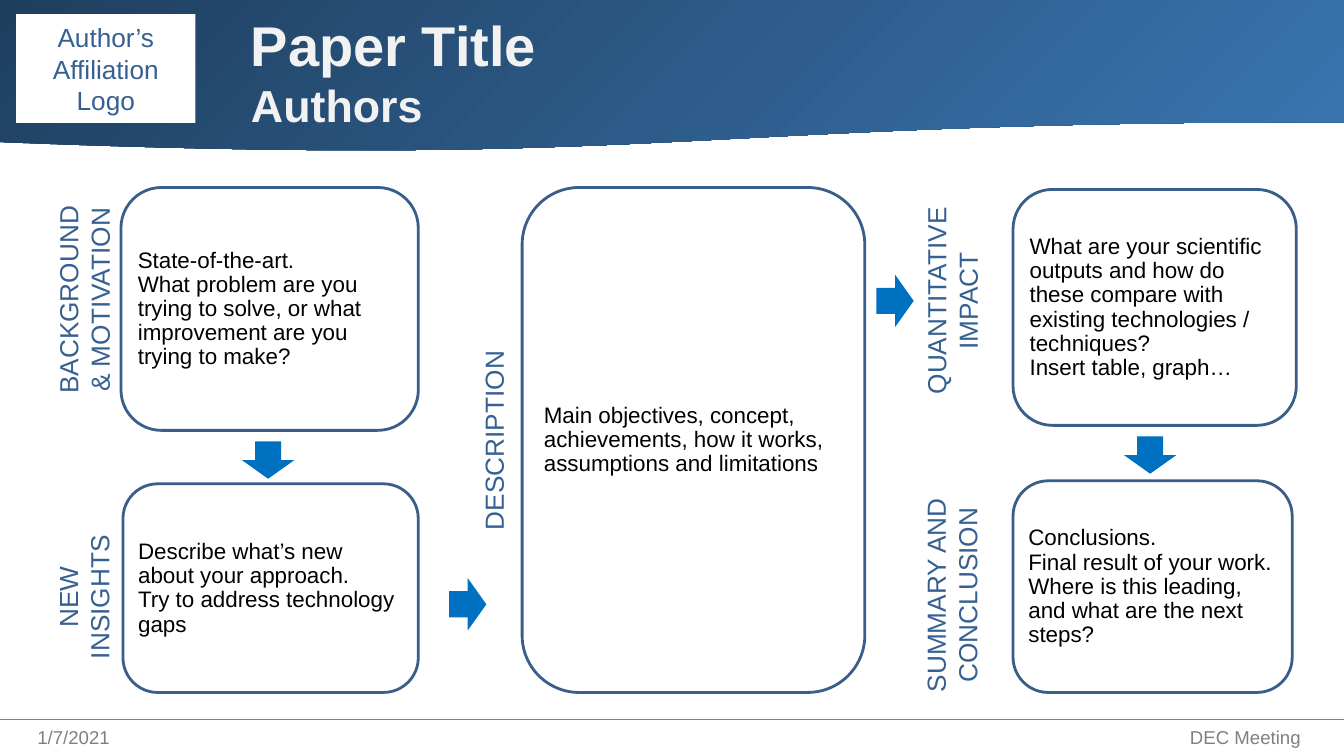
import pptx
import pptx.util
import pptx.dml.color
import pptx.enum.shapes
import pptx.enum.text
import lxml.etree

SHAPE = pptx.enum.shapes.MSO_SHAPE
ALIGN = pptx.enum.text.PP_ALIGN
ANCHOR = pptx.enum.text.MSO_ANCHOR
Pt = pptx.util.Pt

prs = pptx.Presentation()
prs.slide_width = pptx.util.Inches(13.333)
prs.slide_height = pptx.util.Inches(7.5)
s = prs.slides.add_slide(prs.slide_layouts[6])

# Grid: 133.33 columns by 75 rows
COL = prs.slide_width / 133.33
ROW = prs.slide_height / 75


def rgb(value):
    return pptx.dml.color.RGBColor.from_string(value)


def add(at, lines=(), shape=None, fill=None, outline=None, size=16, color="000000",
        bold=False, align=ALIGN.LEFT, anchor=ANCHOR.TOP, insets=(1, 0.5), spacing=None):
    """Add a text box or a preset shape; at is left, top, width, height in grid units."""
    box = [round(n * unit) for n, unit in zip(at, (COL, ROW, COL, ROW))]
    if shape is None:
        sp = s.shapes.add_textbox(*box)
    else:
        sp = s.shapes.add_shape(shape, *box)
        sp.shadow.inherit = False
        if fill:
            sp.fill.solid()
            sp.fill.fore_color.rgb = rgb(fill)
        else:
            sp.fill.background()
        if outline:
            sp.line.color.rgb = rgb(outline)
            sp.line.width = Pt(2)
        else:
            sp.line.fill.background()
    tf = sp.text_frame
    tf.word_wrap = True
    tf.vertical_anchor = anchor
    tf.margin_left = tf.margin_right = round(insets[0] * COL)
    tf.margin_top = tf.margin_bottom = round(insets[1] * ROW)
    for i, line in enumerate(lines):
        p = tf.paragraphs[0] if i == 0 else tf.add_paragraph()
        p.alignment = align
        p.line_spacing = spacing
        r = p.add_run()
        r.text = line
        r.font.name = "Arial"
        r.font.size = Pt(size)
        r.font.bold = bold
        r.font.color.rgb = rgb(color)
    return sp


# Header band
band = add((0, 0, 133.33, 15.1), shape=SHAPE.FLOWCHART_DOCUMENT)
band.fill.gradient()
band.fill.gradient_angle = 315
for stop, color in zip(band.fill.gradient_stops, ("1F3F5F", "3A75B0")):
    stop.color.rgb = rgb(color)

# Footer rule
rule = s.shapes.add_connector(pptx.enum.shapes.MSO_CONNECTOR.STRAIGHT,
                              0, round(71.4 * ROW), prs.slide_width, round(71.4 * ROW))
rule.line.color.rgb = rgb("808080")
rule.line.width = Pt(0.75)
lxml.etree.SubElement(rule._element.spPr, pptx.oxml.ns.qn("a:effectLst"))

# Title and authors, one paragraph with a line break
title = add((24.9, 3.5, 88, 7.1), ["Paper Title"], size=40, color="F2F2F2", bold=True,
            anchor=ANCHOR.MIDDLE, insets=(1, 0.5))
title.text_frame.margin_left = 0
p = title.text_frame.paragraphs[0]
p.add_line_break()
r = p.add_run()
r.text = "Authors"
r.font.name = "Arial"
r.font.size = Pt(32)
r.font.bold = True
r.font.color.rgb = rgb("F2F2F2")

# Footer
for at, text, align in (((3.7, 72, 30, 3), "1/7/2021", ALIGN.LEFT),
                        ((114, 72, 19.1, 3), "DEC Meeting", ALIGN.CENTER)):
    add(at, [text], size=13.3, color="808080", align=align, insets=(0, 0))

# Affiliation box
add((1.6, 1.4, 17.8, 10.8), ["Author’s Affiliation Logo"], shape=SHAPE.RECTANGLE,
    fill="FFFFFF", size=18.7, color="366092", align=ALIGN.CENTER, anchor=ANCHOR.MIDDLE)

# Vertical section labels
labels = (
    ((-2.8, 26.1, 22.3, 7.3), "BACKGROUND & MOTIVATION"),
    ((-2.1, 55.6, 20.8, 7.3), "NEW INSIGHTS"),
    ((26.6, 41.6, 44.8, 4.2), "DESCRIPTION"),
    ((83.4, 26.2, 22.1, 7.3), "QUANTITATIVE IMPACT"),
    ((81.3, 55.4, 26.2, 7.3), "SUMMARY AND CONCLUSION"),
)
for at, text in labels:
    add(at, [text], size=18.7, color="366092", align=ALIGN.CENTER).rotation = 270

# Flow arrows: left, top, rotation
for left, top, turn in ((24, 43.8, 0), (43.8, 58.1, 270),
                        (86.2, 28, 270), (111.5, 43.3, 0)):
    add((left, top, 5.2, 3.7), shape=SHAPE.DOWN_ARROW, fill="0070C0").rotation = turn

# Section boxes
sections = (
    ((12, 18.6, 29.5, 24.1), [
        "State-of-the-art.",
        "What problem are you trying to solve, or what improvement are you trying to make?"]),
    ((12.2, 48, 29.3, 20.7), [
        "Describe what’s new about your approach.",
        "Try to address technology gaps"]),
    ((51.8, 18.6, 34, 50.1), [
        "Main objectives, concept, achievements, how it works, assumptions and limitations"]),
    ((100.5, 18.8, 28.1, 23.4), [
        "What are your scientific outputs and how do these compare with existing "
        "technologies / techniques?",
        "Insert table, graph…"]),
    ((100.5, 47.7, 27.7, 21), [
        "Conclusions.",
        "Final result of your work. Where is this leading, and what are the next steps?"]),
)
for at, lines in sections:
    add(at, lines, shape=SHAPE.ROUNDED_RECTANGLE, outline="395E89",
        anchor=ANCHOR.MIDDLE, insets=(0.5, 0.7), spacing=Pt(17.3))

prs.save("out.pptx")
